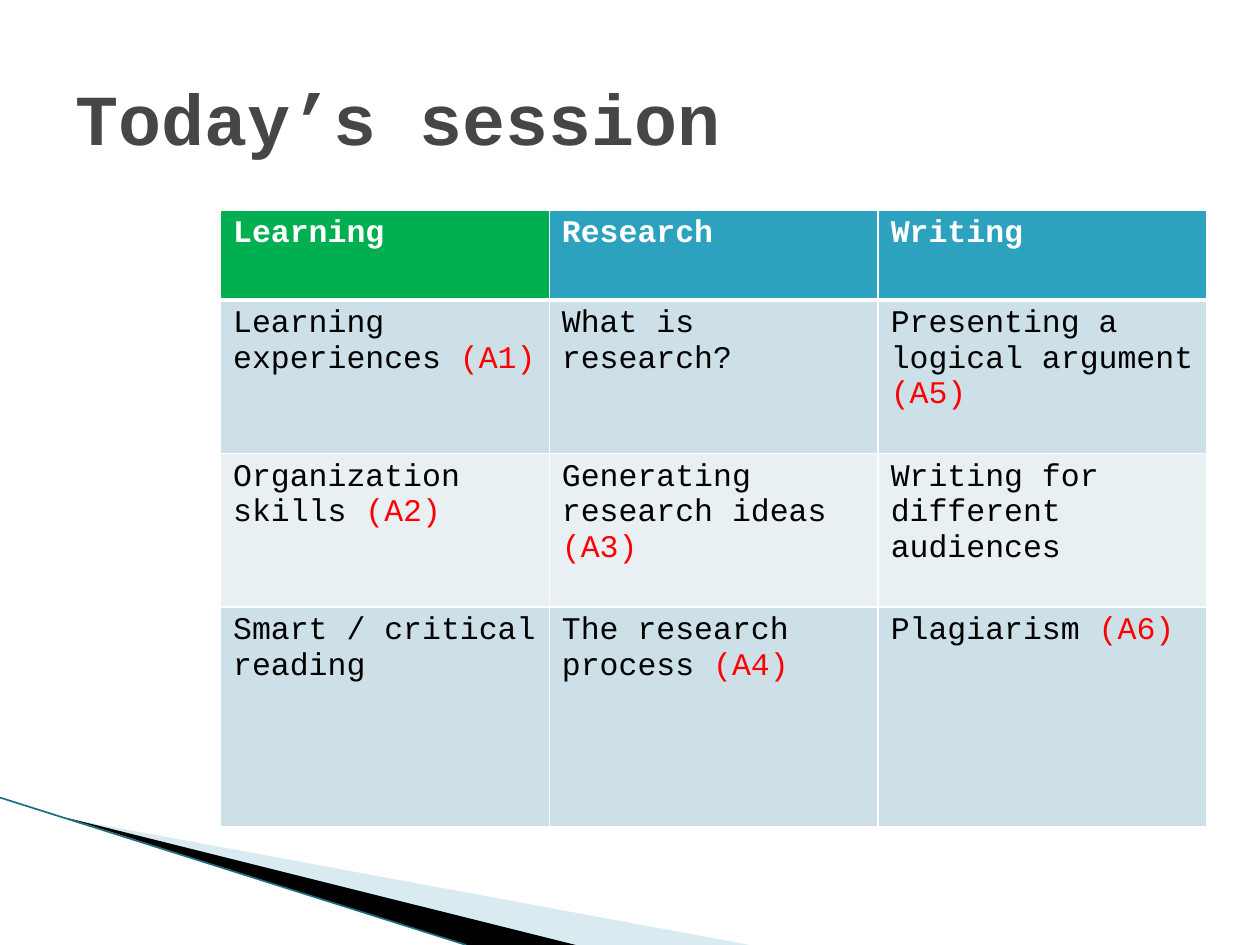
from lxml import etree
from pptx import Presentation
from pptx import util as u
from pptx.dml.color import RGBColor
from pptx.enum import shapes, text
from pptx.oxml.ns import qn

COLORS = {
    "title": "464646", "white": "FFFFFF", "black": "000000", "code": "FF0000",
    "current": "00B050", "header": "2DA2BF", "band_dark": "CDE0E8",
    "band_light": "E8F0F4", "wedge": "A0CBDC", "edge": "1A7080",
}
FONT = "Courier New"
TITLE = "Today’s session"
HEADERS = ["Learning", "Research", "Writing"]
TOPICS = [
    [("Learning experiences ", "(A1)"), ("What is research?",),
     ("Presenting a logical argument ", "(A5)")],
    [("Organization skills ", "(A2)"), ("Generating research ideas ", "(A3)"),
     ("Writing for different audiences",)],
    [("Smart / critical reading",), ("The research process ", "(A4)"),
     ("Plagiarism ", "(A6)")],
]
COLUMN_WIDTH = 2.61
ROW_HEIGHTS = [0.71, 1.22, 1.22, 1.74]
WEDGES = [
    ([(0.55, 6.5), (5.95, 7.5), (4.56, 7.5)], "wedge", 40),
    ([(0.53, 6.49), (4.57, 7.5), (3.7, 7.5)], "black", 100),
]


def rgb(name):
    return RGBColor.from_string(COLORS[name])


def write(frame, parts, size=18, bold=False, colors=("black", "code")):
    para = frame.paragraphs[0]
    for words, color in zip(parts, colors):
        span = para.add_run()
        span.text = words
        span.font.name = FONT
        span.font.size = u.Pt(size)
        span.font.bold = bold
        span.font.color.rgb = rgb(color)


def add_wedge(page, points, color, opacity):
    corners = [(u.Inches(x), u.Inches(y)) for x, y in points]
    builder = page.shapes.build_freeform(*corners[0])
    builder.add_line_segments(corners[1:], close=True)
    wedge = builder.convert_to_shape()
    wedge.shadow.inherit = False
    wedge.fill.solid()
    wedge.fill.fore_color.rgb = rgb(color)
    wedge.line.fill.background()
    if opacity < 100:
        tint = wedge.fill._xPr.find(qn("a:solidFill"))[0]
        etree.SubElement(tint, qn("a:alpha"), val=str(opacity * 1000))


def add_edge(page):
    ends = [u.Inches(value) for value in (0, 6.33, 3.7, 7.5)]
    edge = page.shapes.add_connector(shapes.MSO_CONNECTOR.STRAIGHT, *ends)
    edge.line.color.rgb = rgb("edge")
    edge.line.width = u.Pt(0.95)
    etree.SubElement(edge._element.spPr, qn("a:effectLst"))


def style_cell(cell, fill, bottom=1, top=1):
    properties = cell._tc.get_or_add_tcPr()
    for side, width in (("L", 1), ("R", 1), ("T", top), ("B", bottom)):
        border = etree.SubElement(properties, qn("a:ln" + side), w=str(u.Pt(width)))
        paint = etree.SubElement(border, qn("a:solidFill"))
        etree.SubElement(paint, qn("a:srgbClr"), val=COLORS["white"])
    cell.fill.solid()
    cell.fill.fore_color.rgb = rgb(fill)


def add_topics(page):
    table = page.shapes.add_table(
        len(ROW_HEIGHTS), len(HEADERS), u.Inches(1.75), u.Inches(1.67),
        u.Inches(COLUMN_WIDTH * len(HEADERS)), u.Inches(sum(ROW_HEIGHTS))).table
    for column in table.columns:
        column.width = u.Inches(COLUMN_WIDTH)
    for row, height in zip(table.rows, ROW_HEIGHTS):
        row.height = u.Inches(height)
    for index, header in enumerate(HEADERS):
        cell = table.cell(0, index)
        style_cell(cell, "header" if index else "current", bottom=3)
        write(cell.text_frame, [header], bold=True, colors=["white"])
    for number, topics in enumerate(TOPICS, 1):
        for index, parts in enumerate(topics):
            cell = table.cell(number, index)
            style_cell(cell, "band_dark" if number % 2 else "band_light",
                       top=3 if number == 1 else 1)
            write(cell.text_frame, parts)


def main():
    deck = Presentation()
    deck.slide_width, deck.slide_height = u.Inches(10), u.Inches(7.5)
    page = deck.slides.add_slide(deck.slide_layouts[6])
    for points, color, opacity in WEDGES:
        add_wedge(page, points, color, opacity)
    add_edge(page)
    box = page.shapes.add_textbox(u.Inches(0.5), u.Inches(0.3), u.Inches(9), u.Inches(1.25))
    box.text_frame.word_wrap = True
    box.text_frame.vertical_anchor = text.MSO_ANCHOR.MIDDLE
    write(box.text_frame, [TITLE], size=41, bold=True, colors=["title"])
    add_topics(page)
    deck.save("out.pptx")


if __name__ == "__main__":
    main()
